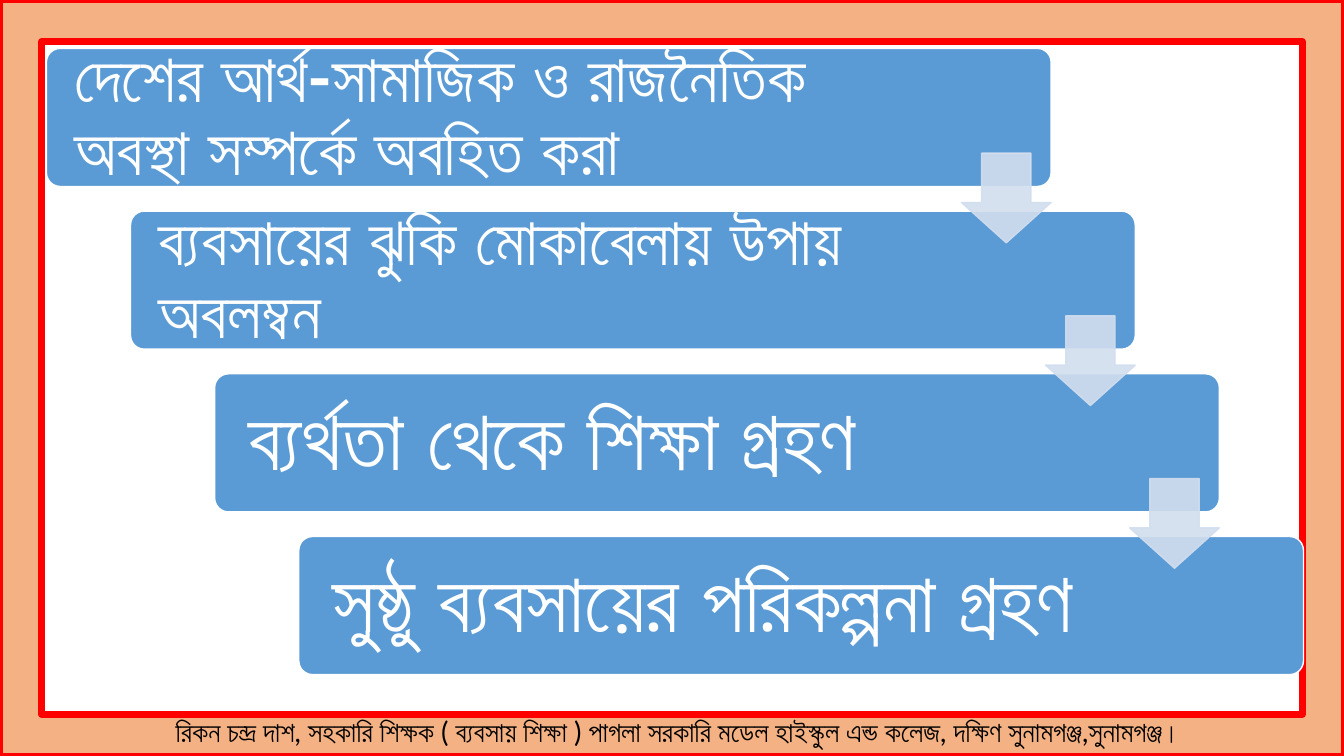
from lxml import etree
from pptx import Presentation
from pptx.dml.color import RGBColor
from pptx.enum.shapes import MSO_SHAPE
from pptx.enum.text import MSO_ANCHOR, PP_ALIGN
from pptx.oxml.ns import qn
from pptx.util import Cm, Pt

FRAME = MSO_SHAPE.FRAME
ROUNDED = MSO_SHAPE.ROUNDED_RECTANGLE
DOWN_ARROW = MSO_SHAPE.DOWN_ARROW
MIDDLE = MSO_ANCHOR.MIDDLE
LEFT, CENTER = PP_ALIGN.LEFT, PP_ALIGN.CENTER
BLANK_LAYOUT = 6

# Wording, text size in points, inner margin in cm
STEPS = [
    ("দেশের আর্থ-সামাজিক ও রাজনৈতিক অবস্থা সম্পর্কে অবহিত করা", 48, 0.61),
    ("ব্যবসায়ের ঝুকি মোকাবেলায় উপায় অবলম্বন", 48, 0.61),
    ("ব্যর্থতা থেকে শিক্ষা গ্রহণ", 60, 0.74),
    ("সুষ্ঠু ব্যবসায়ের পরিকল্পনা গ্রহণ", 60, 0.74),
]
FOOTER = ("রিকন চন্দ্র দাশ, সহকারি শিক্ষক ( ব্যবসায় শিক্ষা ) পাগলা সরকারি মডেল "
          "হাইস্কুল এন্ড কলেজ, দক্ষিণ সুনামগঞ্জ,সুনামগঞ্জ।")

# Staircase geometry in cm
STEP_LEFT, STEP_TOP = 1.17, 1.22
STEP_RIGHTWARD, STEP_DOWNWARD = 2.12, 4.1
STEP_WIDTH, STEP_HEIGHT = 25.32, 3.48
ARROW_SIZE, ARROW_DROP = 2.26, 2.64
ARROW_ROOM = 4.4


def colour(value):
    return RGBColor.from_string(value)


class Page:
    """Holds the style and the slide being drawn."""

    font = "Lato"

    def __init__(self, slide):
        self.shapes = slide.shapes

    def shape(self, kind, left, top, width, height, fill, line, weight, adjustments):
        shape = self.shapes.add_shape(kind, Cm(left), Cm(top), Cm(width), Cm(height))
        shape.shadow.inherit = False
        shape.fill.solid()
        shape.fill.fore_color.rgb = colour(fill)
        shape.line.color.rgb = colour(line)
        shape.line.width = Pt(weight)
        for index, value in enumerate(adjustments):
            shape.adjustments[index] = value
        return shape

    def set_text(self, box, text, size, ink, align, bold=False):
        box.text_frame.word_wrap = True
        box.text_frame.text = text
        para = box.text_frame.paragraphs[0]
        para.alignment = align
        for span in para.runs:
            span.font.name = self.font
            span.font.size = Pt(size)
            span.font.bold = bold
            span.font.color.rgb = colour(ink)
        return para

    def footer(self, text):
        box = self.shapes.add_textbox(Cm(1.35), Cm(17.88), Cm(31.5), Cm(1.12))
        self.set_text(box, text, 20, "000000", CENTER)

    def step(self, left, top, text, size, margin):
        box = self.shape(ROUNDED, left, top, STEP_WIDTH, STEP_HEIGHT,
                         "5B9BD5", "FFFFFF", 1, [0.1])
        frame = box.text_frame
        frame.vertical_anchor = MIDDLE
        frame.margin_left = frame.margin_top = frame.margin_bottom = Cm(margin)
        frame.margin_right = Cm(margin + ARROW_ROOM)
        para = self.set_text(box, text, size, "FFFFFF", LEFT, bold=True)
        para.line_spacing = 0.9

    def arrow(self, left, top):
        arrow = self.shape(DOWN_ARROW, left, top, ARROW_SIZE, ARROW_SIZE,
                           "D2DEEF", "D2DEEF", 1, [0.55, 0.45])
        # Fill and outline are both 90 % opaque
        for tone in arrow.element.spPr.iter(qn("a:srgbClr")):
            etree.SubElement(tone, qn("a:alpha")).set("val", "90000")


def main():
    deck = Presentation()
    deck.slide_width, deck.slide_height = Cm(33.87), Cm(19.05)
    page = Page(deck.slides.add_slide(deck.slide_layouts[BLANK_LAYOUT]))

    # Border and footer
    page.shape(FRAME, 0, 0, 33.87, 19.05, "F4B183", "FF0000", 4.5, [0.055])
    page.footer(FOOTER)

    # Staircase of steps
    corners = [(STEP_LEFT + i * STEP_RIGHTWARD, STEP_TOP + i * STEP_DOWNWARD)
               for i in range(len(STEPS))]
    for (left, top), (text, size, margin) in zip(corners, STEPS):
        page.step(left, top, text, size, margin)

    # Arrows from each step to the next, flush with the step's right edge
    for left, top in corners[:-1]:
        page.arrow(left + STEP_WIDTH - ARROW_SIZE, top + ARROW_DROP)

    deck.save("out.pptx")


if __name__ == "__main__":
    main()
